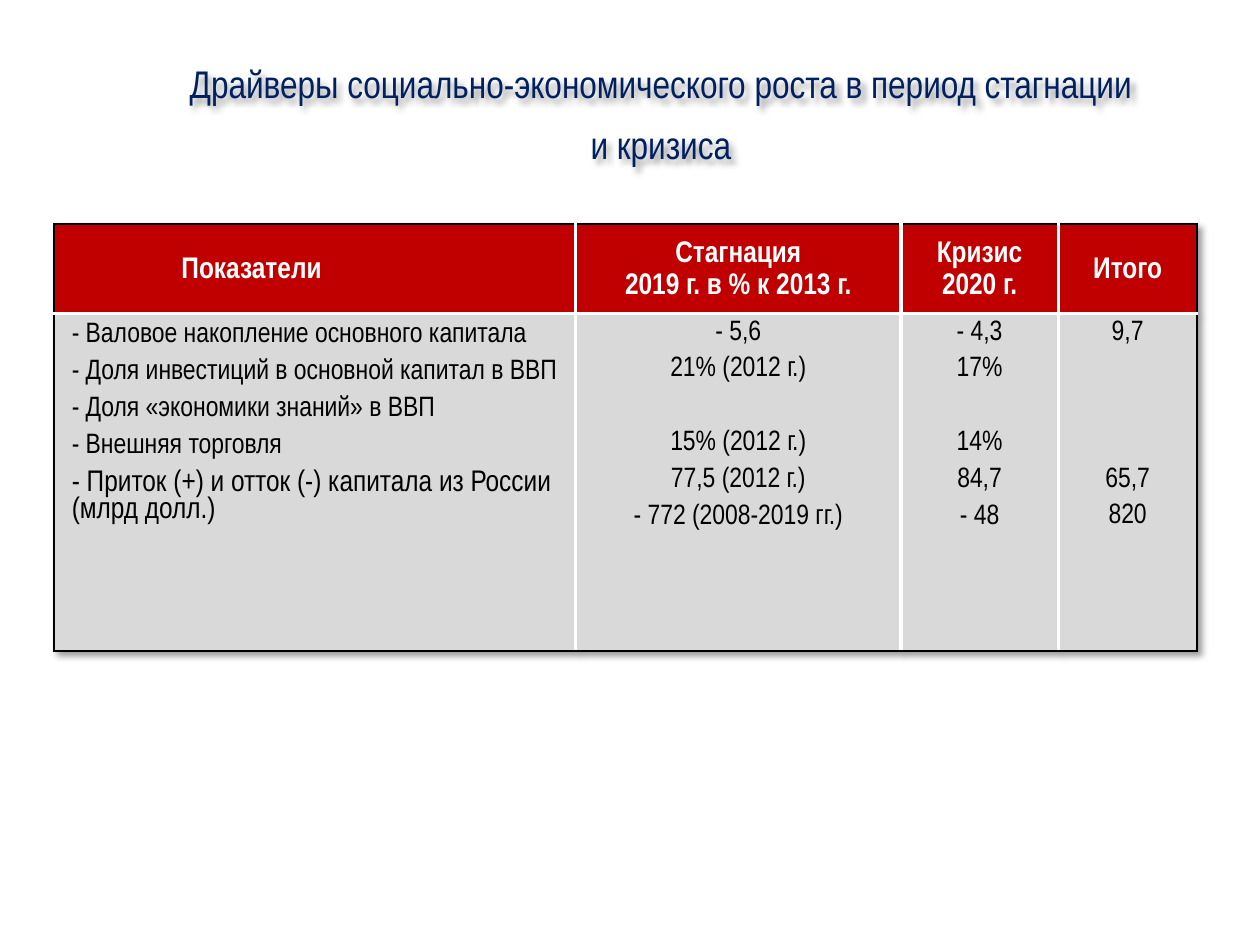
from lxml.etree import SubElement
from pptx import Presentation
from pptx.dml.color import RGBColor
from pptx.enum.text import MSO_ANCHOR as Anchor, MSO_AUTO_SIZE as AutoSize, PP_ALIGN as Align
from pptx.oxml.ns import qn
from pptx.util import Emu, Inches, Pt

COLORS = {"title": "002060", "header": "C00000", "body": "D9D9D9",
          "light": "FFFFFF", "dark": "000000"}
FONT = "Arial Narrow"
LINE_STEP = 21  # points from one 16 pt body line to the next

TITLE = ["Драйверы социально-экономического роста в период стагнации", "и кризиса"]
HEADERS = [["Показатели"], ["Стагнация", "2019 г. в % к 2013 г."],
           ["Кризис", "2020 г."], ["Итого"]]
INDICATORS = [
    "- Валовое накопление основного капитала",
    "- Доля инвестиций в основной капитал в ВВП",
    "- Доля «экономики знаний» в ВВП",
    "- Внешняя торговля",
    "- Приток (+) и отток (-) капитала из России (млрд долл.)",
]
# None leaves a line free
VALUES = [
    ["- 5,6", "21% (2012 г.)", None, "15% (2012 г.)", "77,5 (2012 г.)",
     "- 772 (2008-2019 гг.)"],
    ["- 4,3", "17%", None, "14%", "84,7", "- 48"],
    ["9,7", None, None, None, "65,7", "820"],
]
COLUMNS = [4.14, 2.58, 1.25, 1.1]
ROWS = [0.71, 2.68]


def rgb(name):
    return RGBColor.from_string(COLORS[name])


def add_shadow(properties):
    """Soft shadow to the lower right."""
    effects = SubElement(properties, qn("a:effectLst"))
    shadow = SubElement(effects, qn("a:outerShdw"), blurRad=str(Pt(4)), dist=str(Pt(3)),
                        dir="2700000", algn="tl", rotWithShape="0")
    color = SubElement(shadow, qn("a:srgbClr"), val=COLORS["dark"])
    SubElement(color, qn("a:alpha"), val="40000")


def write(frame, lines, size, color, bold=False, align=Align.CENTER,
          spacing=None, after=0, indent=0):
    """One paragraph per line; free lines become space before the next one."""
    gap, first = 0, True
    for line in lines:
        if line is None:
            gap += LINE_STEP
            continue
        para = frame.paragraphs[0] if first else frame.add_paragraph()
        first = False
        para.text = line
        para.alignment = align
        para.line_spacing = spacing
        para.space_before, para.space_after = Pt(gap), Pt(after)
        gap = 0
        font = para.font
        font.name, font.size, font.bold = FONT, Pt(size), bold
        font.color.rgb = rgb(color)
        if indent:
            properties = para._p.get_or_add_pPr()
            properties.set("marL", "0")
            properties.set("indent", str(Inches(indent)))


def set_borders(cell, outer):
    """Thin dark lines on outer sides, thick light lines inside."""
    properties = cell._tc.get_or_add_tcPr()
    for side in "LRTB":
        color, width = ("dark", 1) if side in outer else ("light", 2.25)
        line = SubElement(properties, qn(f"a:ln{side}"), w=str(Pt(width)))
        fill = SubElement(line, qn("a:solidFill"))
        SubElement(fill, qn("a:srgbClr"), val=COLORS[color])


def add_title(page, box):
    title = page.shapes.title
    title.left, title.top, title.width, title.height = box
    frame = title.text_frame
    frame.word_wrap, frame.auto_size = True, AutoSize.NONE
    frame.vertical_anchor = Anchor.MIDDLE
    write(frame, TITLE, 22, "title", spacing=0.9, after=6, indent=0.49)
    frame.paragraphs[1].space_before = Pt(5)
    add_shadow(title._element.spPr)


def add_indicator_table(page, box):
    table = page.shapes.add_table(len(ROWS), len(COLUMNS), *box).table
    table.horz_banding = False
    for column, share in zip(table.columns, COLUMNS):
        column.width = Emu(int(box[2] * share / sum(COLUMNS)))
    for row, share in zip(table.rows, ROWS):
        row.height = Emu(int(box[3] * share / sum(ROWS)))

    last = len(COLUMNS) - 1
    for index in range(len(COLUMNS)):
        sides = ("L" if index == 0 else "") + ("R" if index == last else "")
        header, body = table.cell(0, index), table.cell(1, index)
        for cell, edge, fill in ((header, "T", "header"), (body, "B", "body")):
            set_borders(cell, sides + edge)
            cell.fill.solid()
            cell.fill.fore_color.rgb = rgb(fill)
            if cell is header or index == 0:
                cell.margin_left = cell.margin_right = Inches(0.14)
                cell.margin_top = cell.margin_bottom = Inches(0.07)

        # Header cell
        header.vertical_anchor = Anchor.MIDDLE
        write(header.text_frame, HEADERS[index], 17, "light", bold=True, spacing=1.15,
              align=Align.CENTER if index else Align.LEFT, indent=0 if index else 0.87)

        # Body cell
        if index:
            write(body.text_frame, VALUES[index - 1], 16, "dark", after=6)
        else:
            write(body.text_frame, INDICATORS, 16, "dark", align=Align.LEFT, after=6)
            body.text_frame.paragraphs[-1].font.size = Pt(17)
    add_shadow(table._tbl.tblPr_lst[0] if hasattr(table._tbl, "tblPr_lst")
               else table._tbl.tblPr)
    # The style id has to follow the effects
    properties = table._tbl.tblPr
    style = properties.find(qn("a:tableStyleId"))
    if style is not None:
        properties.append(style)


def main():
    deck = Presentation()
    deck.slide_width, deck.slide_height = Inches(10), Inches(7.5)
    page = deck.slides.add_slide(deck.slide_layouts[5])

    def area(left, top, width, height):
        """Box from shares of the slide's size."""
        return [Emu(int(share * size)) for share, size in zip(
            (left, top, width, height), (deck.slide_width, deck.slide_height) * 2)]

    add_title(page, area(0.05, 0.04, 0.9, 1 / 6))
    add_indicator_table(page, area(0.043, 0.237, sum(COLUMNS) / 10, sum(ROWS) / 7.5))
    deck.save("out.pptx")


if __name__ == "__main__":
    main()
